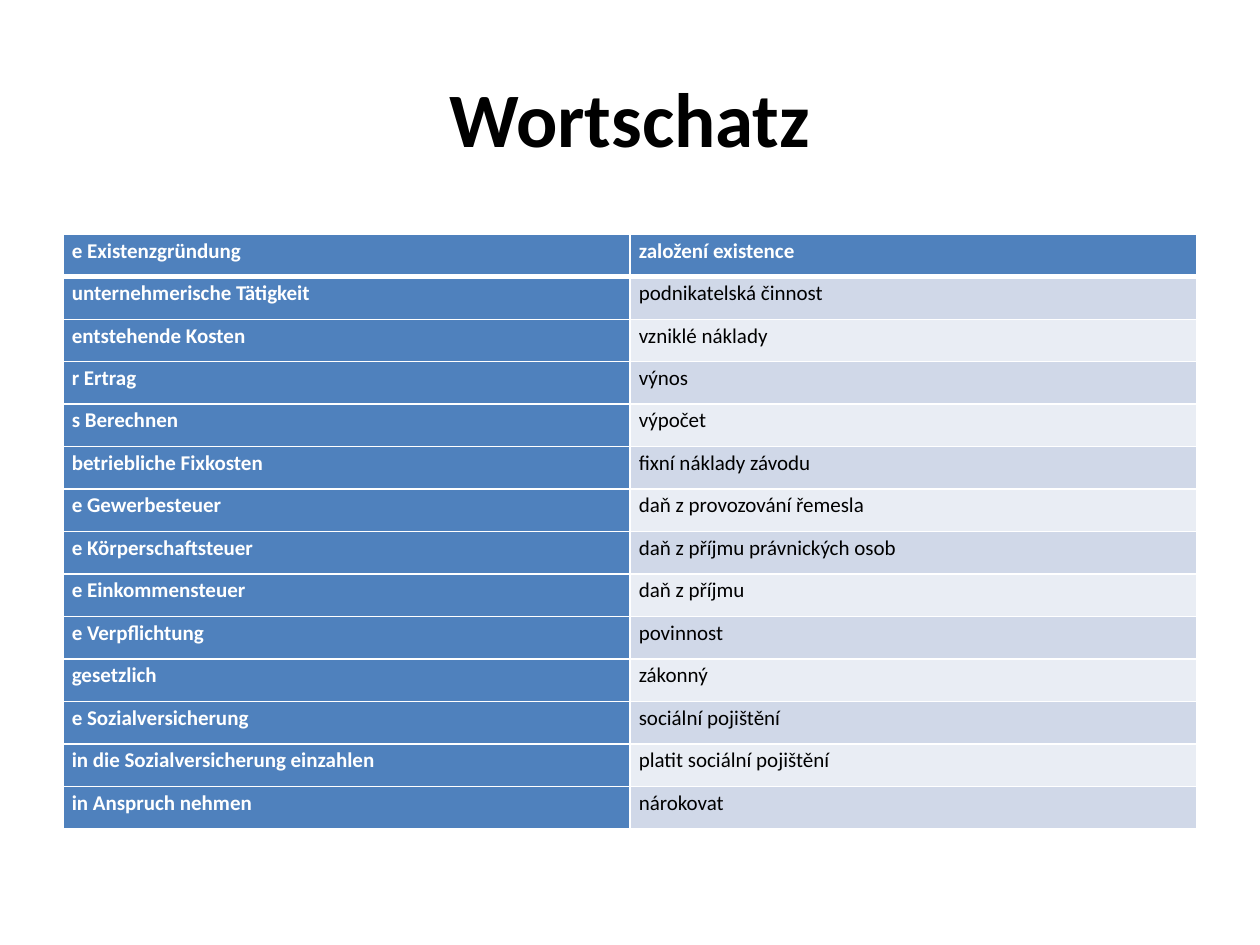
"""Build the vocabulary slide "Wortschatz" with its German and Czech terms."""
from lxml.etree import SubElement
from pptx import Presentation
from pptx.dml.color import RGBColor
from pptx.enum.text import MSO_ANCHOR, PP_ALIGN
from pptx.oxml.ns import qn
from pptx.util import Inches, Pt

COLORS = {
    "text": "000000",
    "white": "FFFFFF",
    "header": "4F81BD",
    "odd_row": "D0D8E8",
    "even_row": "E9EDF4",
}
FONT = "Calibri"
VOCABULARY = [
    ("e Existenzgründung", "založení existence"),
    ("unternehmerische Tätigkeit", "podnikatelská činnost"),
    ("entstehende Kosten", "vzniklé náklady"),
    ("r Ertrag", "výnos"),
    ("s Berechnen", "výpočet"),
    ("betriebliche Fixkosten", "fixní náklady závodu"),
    ("e Gewerbesteuer", "daň z provozování řemesla"),
    ("e Körperschaftsteuer", "daň z příjmu právnických osob"),
    ("e Einkommensteuer", "daň z příjmu"),
    ("e Verpflichtung", "povinnost"),
    ("gesetzlich", "zákonný"),
    ("e Sozialversicherung", "sociální pojištění"),
    ("in die Sozialversicherung einzahlen", "platit sociální pojištění"),
    ("in Anspruch nehmen", "nárokovat"),
]


def color(name):
    return RGBColor.from_string(COLORS[name])


def style_font(paragraph, size, color_name, bold):
    font = paragraph.font
    font.name = FONT
    font.size = Pt(size)
    font.bold = bold
    font.color.rgb = color(color_name)


def add_heading(slide, text):
    heading = slide.shapes.add_textbox(Inches(0.5), Inches(0.3), Inches(9), Inches(1.25))
    frame = heading.text_frame
    frame.word_wrap = True
    frame.vertical_anchor = MSO_ANCHOR.MIDDLE
    paragraph = frame.paragraphs[0]
    paragraph.text = text
    paragraph.alignment = PP_ALIGN.CENTER
    style_font(paragraph, 44, "text", True)


def set_borders(cell, top, bottom):
    properties = cell._tc.get_or_add_tcPr()
    for tag, width in (("a:lnL", 1), ("a:lnR", 1), ("a:lnT", top), ("a:lnB", bottom)):
        line = SubElement(properties, qn(tag), w=str(Pt(width)))
        fill = SubElement(line, qn("a:solidFill"))
        SubElement(fill, qn("a:srgbClr"), val=COLORS["white"])


def fill_cell(cell, term, row, column):
    is_header = row == 0 or column == 0
    set_borders(cell, top=3 if row == 1 else 1, bottom=3 if row == 0 else 1)
    cell.fill.solid()
    band = "odd_row" if row % 2 else "even_row"
    cell.fill.fore_color.rgb = color("header" if is_header else band)
    cell.margin_left = cell.margin_right = Inches(0.07)
    cell.margin_top = cell.margin_bottom = 0
    paragraph = cell.text_frame.paragraphs[0]
    paragraph.text = term
    paragraph.alignment = PP_ALIGN.JUSTIFY
    paragraph.line_spacing = 1.15
    paragraph.space_after = Pt(6)
    style_font(paragraph, 12, "white" if is_header else "text", is_header)


def add_vocabulary(slide, pairs):
    height = Inches(4.72)
    table = slide.shapes.add_table(
        len(pairs), 2, Inches(0.5), Inches(1.86), Inches(9), height
    ).table
    table.first_col = True
    for row, pair in enumerate(pairs):
        table.rows[row].height = height // len(pairs)
        for column, term in enumerate(pair):
            fill_cell(table.cell(row, column), term, row, column)


def main():
    presentation = Presentation()
    presentation.slide_width = Inches(10)
    presentation.slide_height = Inches(7.5)
    slide = presentation.slides.add_slide(presentation.slide_layouts[6])
    add_heading(slide, "Wortschatz")
    add_vocabulary(slide, VOCABULARY)
    presentation.save("out.pptx")


if __name__ == "__main__":
    main()
